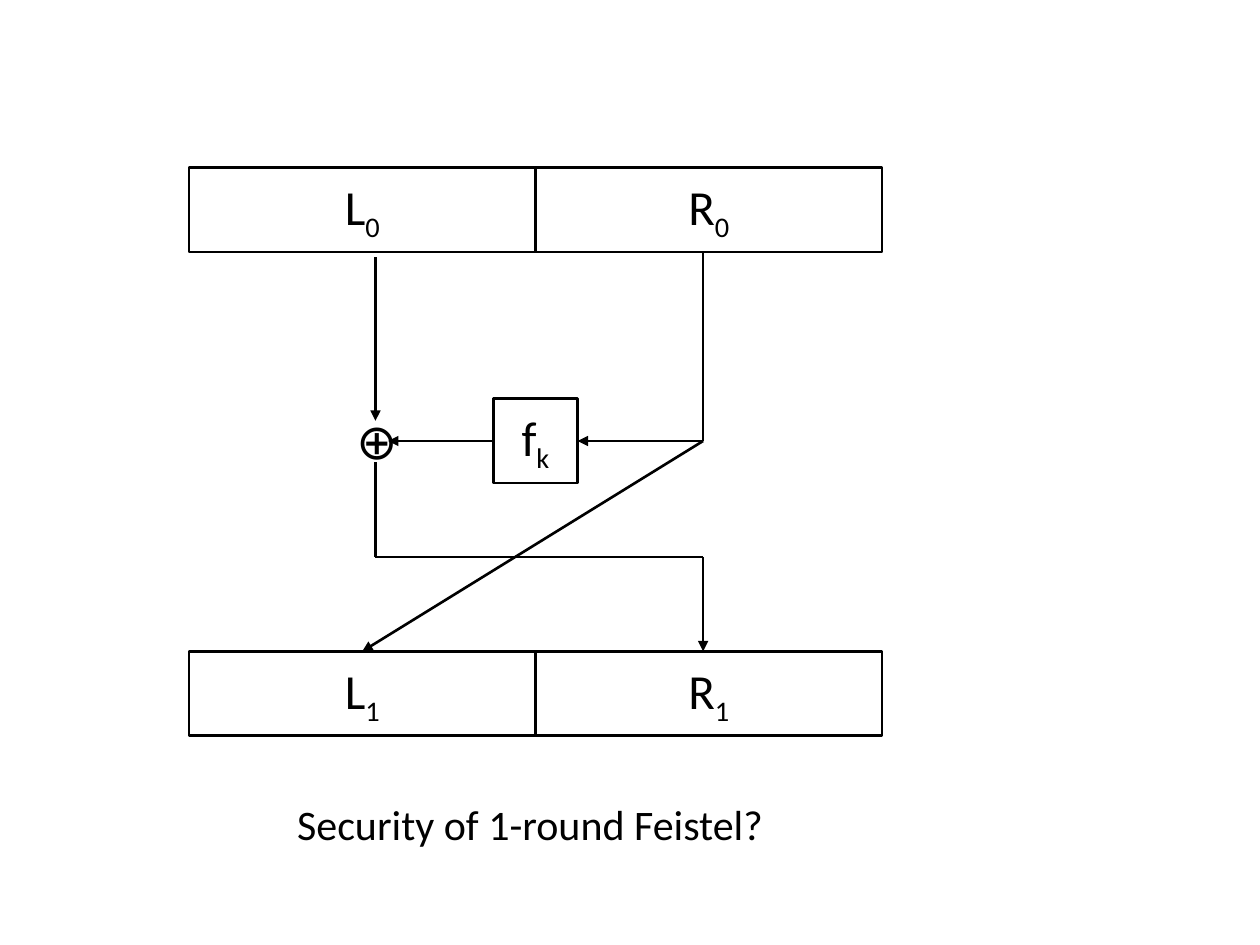
from pptx import Presentation
from pptx.dml.color import RGBColor
from pptx.enum.shapes import MSO_CONNECTOR, MSO_SHAPE
from pptx.enum.text import MSO_ANCHOR, MSO_AUTO_SIZE, PP_ALIGN
from pptx.oxml.ns import qn
from pptx.util import Inches, Pt
from lxml import etree

BLACK = RGBColor(0, 0, 0)
STRAIGHT = MSO_CONNECTOR.STRAIGHT
RECTANGLE = MSO_SHAPE.RECTANGLE
MIDDLE = MSO_ANCHOR.MIDDLE
GROW = MSO_AUTO_SIZE.SHAPE_TO_FIT_TEXT
CENTER = PP_ALIGN.CENTER
BLANK_LAYOUT = 6
LINE_WIDTH = Pt(1.5)
BLOCK_HEIGHT = 0.67


def add_run(paragraph, text, size=28, subscript=False):
    run = paragraph.add_run()
    run.text = text
    for name, value in {"name": "Calibri", "size": Pt(size)}.items():
        setattr(run.font, name, value)
    run.font.color.rgb = BLACK
    if subscript:
        run._r.get_or_add_rPr().set("baseline", "-25000")


def add_block(slide, left, top, width, letter, index):
    """Outlined box holding a letter with a subscript."""
    shape = slide.shapes.add_shape(RECTANGLE, Inches(left), Inches(top),
                                   Inches(width), Inches(BLOCK_HEIGHT))
    shape.shadow.inherit = False
    shape.fill.background()
    shape.line.color.rgb = BLACK
    shape.line.width = LINE_WIDTH
    shape.text_frame.vertical_anchor = MIDDLE
    paragraph = shape.text_frame.paragraphs[0]
    paragraph.alignment = CENTER
    add_run(paragraph, letter)
    add_run(paragraph, index, subscript=True)


def add_label(slide, left, top, width, height, text, size):
    box = slide.shapes.add_textbox(Inches(left), Inches(top),
                                   Inches(width), Inches(height))
    box.text_frame.word_wrap = False
    box.text_frame.auto_size = GROW
    add_run(box.text_frame.paragraphs[0], text, size)


def add_wire(slide, start, end, arrow=False):
    connector = slide.shapes.add_connector(
        STRAIGHT, *(Inches(value) for value in (*start, *end)))
    connector.line.color.rgb = BLACK
    connector.line.width = LINE_WIDTH
    if arrow:
        line = connector.line._get_or_add_ln()
        etree.SubElement(line, qn("a:tailEnd"), type="triangle")
    etree.SubElement(connector._element.spPr, qn("a:effectLst"))


def add_halves(slide, left, top, width, index):
    """Left and right halves of a state, side by side."""
    half = width / 2
    for column, letter in enumerate("LR"):
        add_block(slide, left + column * half, top, half, letter, index)


def add_feistel_round(slide, left, top, width, height):
    center = left + width / 2
    upper_edge = top + BLOCK_HEIGHT
    lower_top = top + height - BLOCK_HEIGHT
    left_wire, right_wire = left + 1.48, left + 4.08
    function_y = top + 2.17
    swap_y = top + 3.09
    function_left = center - BLOCK_HEIGHT / 2
    function_right = center + BLOCK_HEIGHT / 2

    # States before and after the round
    add_halves(slide, left, top, width, "0")
    add_halves(slide, left, lower_top, width, "1")

    # Round function and XOR
    add_block(slide, function_left, function_y - BLOCK_HEIGHT / 2,
              BLOCK_HEIGHT, "f", "k")
    add_label(slide, left_wire - 0.25, function_y - 0.29, 0.5, 0.57, "⊕", 28)

    # Wires: start, end, arrow at the end
    branch = (right_wire, function_y)
    swap_left, swap_right = (left_wire, swap_y), (right_wire, swap_y)
    wires = [
        ((right_wire, upper_edge), branch, False),
        (branch, (function_right, function_y), True),
        ((function_left, function_y), (left_wire + 0.1, function_y), True),
        ((left_wire, upper_edge + 0.04), (left_wire, function_y - 0.16), True),
        ((left_wire, function_y + 0.17), swap_left, False),
        (swap_left, swap_right, False),
        (swap_right, (right_wire, lower_top), True),
        (branch, (left + width / 4, lower_top), True),
    ]
    for start, end, arrow in wires:
        add_wire(slide, start, end, arrow)


def main():
    presentation = Presentation()
    presentation.slide_width = Inches(10)
    presentation.slide_height = Inches(7.5)
    slide = presentation.slides.add_slide(
        presentation.slide_layouts[BLANK_LAYOUT])
    add_feistel_round(slide, 1.5, 1.33, 5.5, 4.51)
    add_label(slide, 2.26, 6.29, 3.94, 0.5, "Security of 1-round Feistel?", 24)
    presentation.save("out.pptx")


if __name__ == "__main__":
    main()
